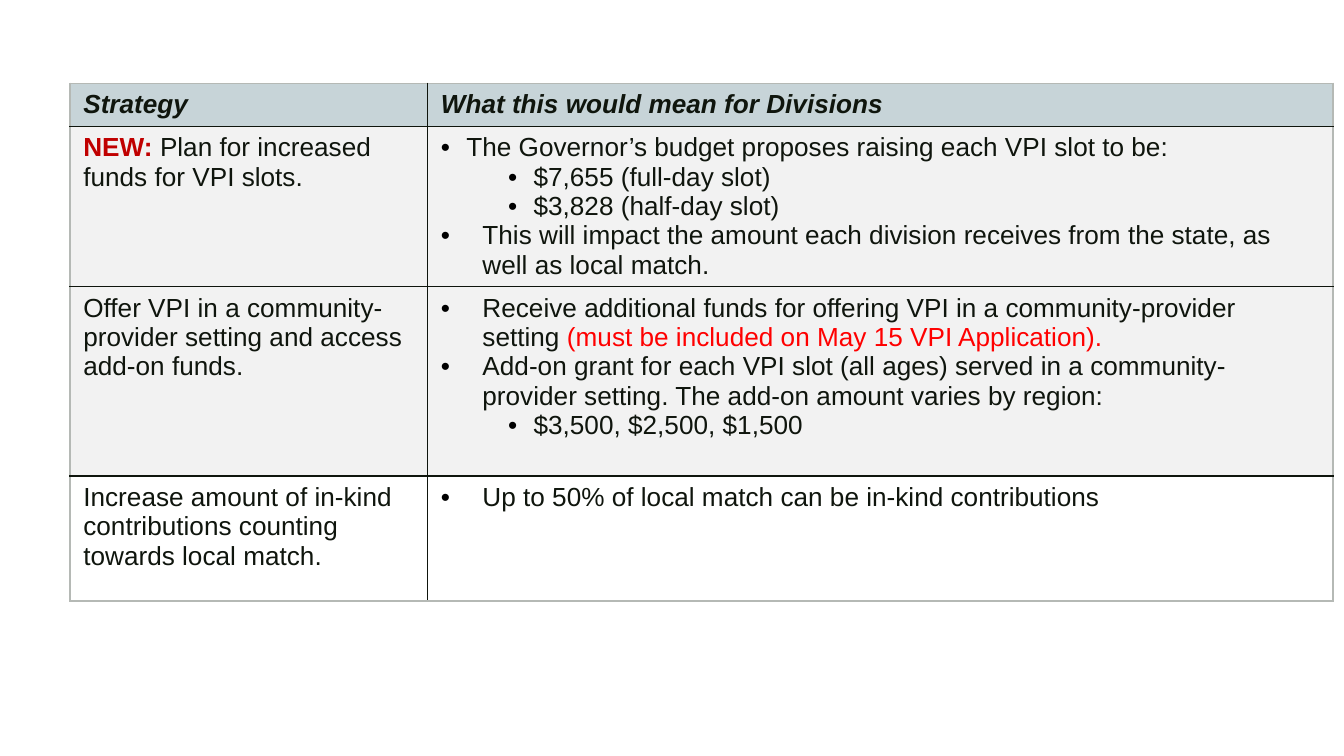
from lxml.etree import SubElement
from pptx import Presentation
from pptx.dml.color import RGBColor
from pptx.oxml.ns import qn
from pptx.util import Inches, Pt

INK = RGBColor(0x0F, 0x15, 0x0D)
BLACK = RGBColor(0x00, 0x00, 0x00)
DARK_RED = RGBColor(0xC0, 0x00, 0x00)
RED = RGBColor(0xFF, 0x00, 0x00)
HEADER_FILL = RGBColor(0xC7, 0xD4, 0xD8)
GREY_FILL = RGBColor(0xF2, 0xF2, 0xF2)
WHITE = RGBColor(0xFF, 0xFF, 0xFF)
OUTER_LINE = RGBColor(0xB5, 0xB9, 0xB5)

# Bullet styles: (level, left indent, hanging indent) in inches
PLAIN = None
TIGHT = (0, 0.19, 0.19)
WIDE = (0, 0.31, 0.31)
SUB = (1, 0.69, 0.19)

HEADING = {"bold": True, "italic": True}
NEW_LABEL = {"bold": True, "color": DARK_RED}
ALERT = {"color": RED}

COLUMN_WIDTHS = (2.66, 6.74)

# Each row: height, fill, cells; a cell lists paragraphs as (bullet, runs)
ROWS = [
    (0.32, HEADER_FILL, [
        [(PLAIN, [("Strategy", HEADING)])],
        [(PLAIN, [("What this would mean for Divisions", HEADING)])],
    ]),
    (1.19, GREY_FILL, [
        [(PLAIN, [("NEW: ", NEW_LABEL),
                  ("Plan for increased funds for VPI slots.", {})])],
        [(TIGHT, [("The Governor’s budget proposes raising each VPI slot to be:", {})]),
         (SUB, [("$7,655 (full-day slot)", {})]),
         (SUB, [("$3,828 (half-day slot)", {})]),
         (WIDE, [("This will impact the amount each division receives from the "
                  "state, as well as local match.", {})])],
    ]),
    (1.41, GREY_FILL, [
        [(PLAIN, [("Offer VPI in a community-provider setting and access "
                   "add-on funds.", {})])],
        [(WIDE, [("Receive additional funds for offering VPI in a "
                  "community-provider setting ", {}),
                 ("(must be included on May 15 VPI Application).", ALERT)]),
         (WIDE, [("Add-on grant for each VPI slot (all ages) served in a "
                  "community-provider setting. The add-on amount varies by region:", {})]),
         (SUB, [("$3,500, $2,500, $1,500", {})])],
    ]),
    (0.93, WHITE, [
        [(PLAIN, [("Increase amount of in-kind contributions counting towards "
                   "local match.", {})])],
        [(WIDE, [("Up to 50% of local match can be in-kind contributions", {})])],
    ]),
]


class SlideBuilder:
    def __init__(self, slide, font="Arial", size=14):
        self.slide = slide
        self.font = font
        self.size = size

    def table(self, left, top, widths, rows):
        height = sum(row_height for row_height, _, _ in rows)
        frame = self.slide.shapes.add_table(
            len(rows), len(widths), Inches(left), Inches(top),
            Inches(sum(widths)), Inches(height))
        table = frame.table
        for column, width in zip(table.columns, widths):
            column.width = Inches(width)
        last_row, last_column = len(rows) - 1, len(widths) - 1
        for r, (row_height, fill, cells) in enumerate(rows):
            table.rows[r].height = Inches(row_height)
            for c, paragraphs in enumerate(cells):
                cell = table.cell(r, c)
                outer = {"L": c == 0, "R": c == last_column,
                         "T": r == 0, "B": r == last_row}
                self.borders(cell, outer)
                cell.fill.solid()
                cell.fill.fore_color.rgb = fill
                self.text(cell.text_frame, paragraphs)

    def borders(self, cell, outer):
        """Draw the four sides, lighter where a side is on the table's edge."""
        properties = cell._tc.get_or_add_tcPr()
        for side, is_outer in outer.items():
            line = SubElement(properties, qn(f"a:ln{side}"), w=str(Pt(1)))
            solid = SubElement(line, qn("a:solidFill"))
            color = OUTER_LINE if is_outer else INK
            SubElement(solid, qn("a:srgbClr"), val=str(color))

    def text(self, text_frame, paragraphs):
        for index, (bullet, runs) in enumerate(paragraphs):
            paragraph = text_frame.paragraphs[0] if index == 0 else text_frame.add_paragraph()
            if bullet:
                self.bullet(paragraph, *bullet)
            for text, style in runs:
                self.run(paragraph, text, style)

    def bullet(self, paragraph, level, indent, hanging):
        paragraph.level = level
        properties = paragraph._p.get_or_add_pPr()
        properties.set("marL", str(Inches(indent)))
        properties.set("indent", str(-Inches(hanging)))
        color = SubElement(properties, qn("a:buClr"))
        SubElement(color, qn("a:srgbClr"), val=str(BLACK))
        SubElement(properties, qn("a:buFont"), typeface=self.font)
        SubElement(properties, qn("a:buChar"), char="•")

    def run(self, paragraph, text, style):
        run = paragraph.add_run()
        run.text = text
        values = {"name": self.font, "size": Pt(self.size), "bold": False,
                  "italic": False, "color": INK, **style}
        run.font.color.rgb = values.pop("color")
        for attribute, value in values.items():
            setattr(run.font, attribute, value)


def main():
    presentation = Presentation()
    presentation.slide_width = Inches(10)
    presentation.slide_height = presentation.slide_width * 9 // 16
    blank_layout = presentation.slide_layouts[6]
    builder = SlideBuilder(presentation.slides.add_slide(blank_layout))
    builder.table(0.52, 0.62, COLUMN_WIDTHS, ROWS)
    presentation.save("out.pptx")


if __name__ == "__main__":
    main()
